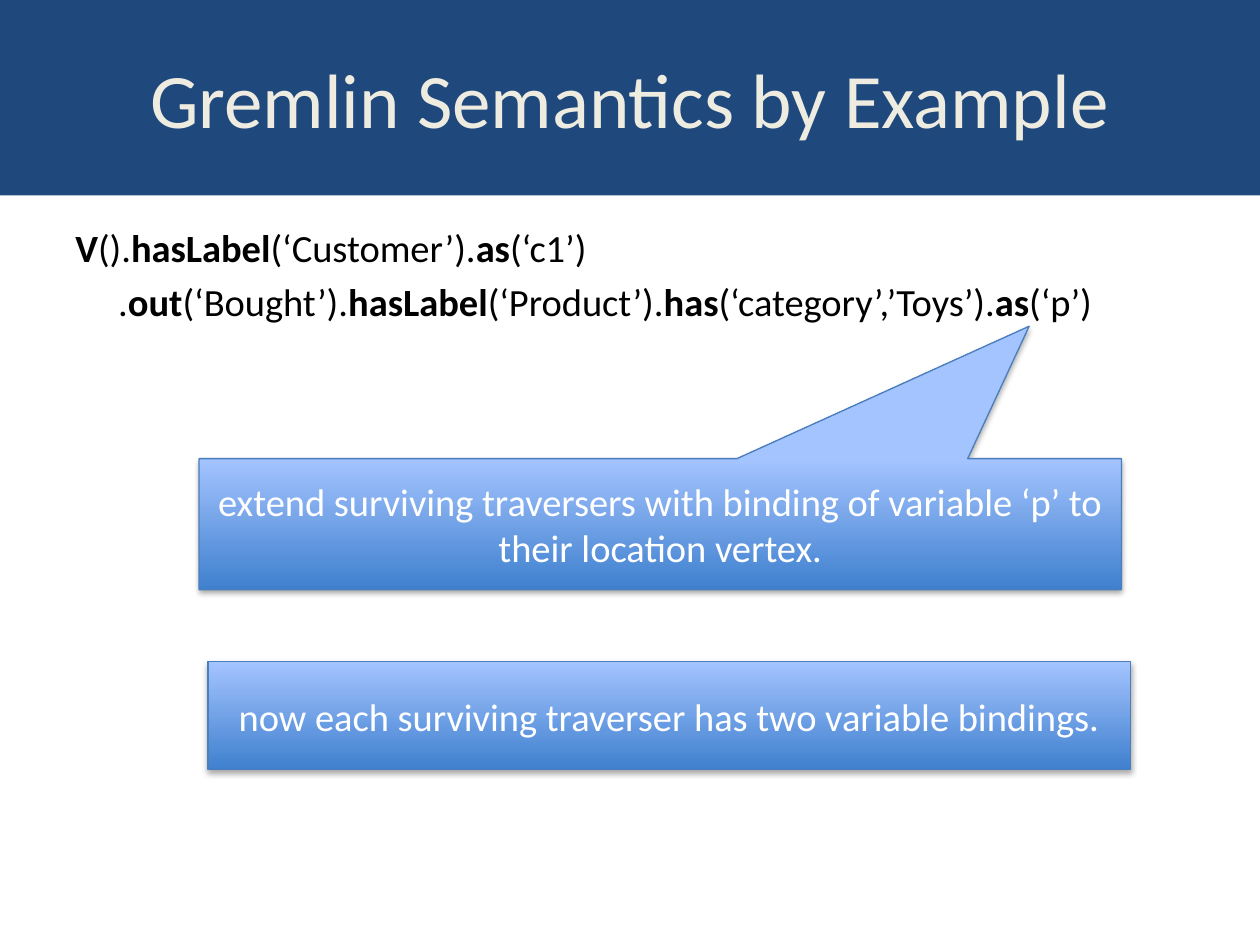
from lxml import etree
from pptx import Presentation
from pptx.dml.color import RGBColor
from pptx.enum import shapes, text
from pptx.oxml import ns
from pptx.util import Inches, Pt

COLORS = {
    "banner": "1F497D", "title": "EEECE1", "code": "000000",
    "callout_low": "3F80CE", "callout_high": "A4C4FF",
    "callout_edge": "4B7EBC", "callout_text": "FFFFFF", "shadow": "000000",
}
FONT = "Calibri"
TRAVERSAL = [
    (0, [("V", True), ("().", False), ("hasLabel", True),
         ("(‘Customer’).", False), ("as", True), ("(‘c1’)", False)]),
    (0.34, [(".", False), ("out", True), ("(‘Bought’).", False),
            ("hasLabel", True), ("(‘Product’).", False), ("has", True),
            ("(‘category’,’Toys’).", False), ("as", True), ("(‘p’)", False)]),
]
CALLOUTS = [
    ((1.58, 3.64, 7.32, 1.04), (0.4, -1.51),
     "extend surviving traversers with binding of variable ‘p’ to their location vertex."),
    ((1.65, 5.25, 7.32, 0.86), (0.31, -0.5),
     "now each surviving traverser has two variable bindings."),
]


def rgb(name):
    """Return the named palette colour."""
    return RGBColor.from_string(COLORS[name])


def set_font(paragraph, size, color):
    """Give a paragraph its typeface, size and colour."""
    paragraph.font.name = FONT
    paragraph.font.size = Pt(size)
    paragraph.font.color.rgb = rgb(color)


def write_centred(shape, wording, size, color):
    """Write one paragraph in the middle of a shape."""
    frame = shape.text_frame
    frame.word_wrap = True
    frame.vertical_anchor = text.MSO_ANCHOR.MIDDLE
    paragraph = frame.paragraphs[0]
    paragraph.text = wording
    paragraph.alignment = text.PP_ALIGN.CENTER
    set_font(paragraph, size, color)


def add_banner(slide, box, wording):
    """Draw the title banner."""
    banner = slide.shapes.add_shape(shapes.MSO_SHAPE.RECTANGLE, *map(Inches, box))
    banner.shadow.inherit = False
    banner.fill.solid()
    banner.fill.fore_color.rgb = rgb("banner")
    banner.line.fill.background()
    write_centred(banner, wording, 44, "title")


def add_traversal(slide, box, lines):
    """Write the query, one paragraph per line, with step names in bold."""
    frame = slide.shapes.add_textbox(*map(Inches, box)).text_frame
    frame.word_wrap = True
    for number, (indent, pieces) in enumerate(lines):
        line = frame.add_paragraph() if number else frame.paragraphs[0]
        line.space_before = Pt(4.4)
        line._p.get_or_add_pPr().set("marL", str(Inches(indent)))
        set_font(line, 22, "code")
        for wording, bold in pieces:
            step = line.add_run()
            step.text = wording
            step.font.bold = bold


def add_soft_shadow(shape):
    """Add a soft shadow below a shape."""
    shape.shadow.inherit = False
    effects = shape._element.spPr.find(ns.qn("a:effectLst"))
    shadow = etree.SubElement(
        effects, ns.qn("a:outerShdw"), blurRad=str(Pt(3.1)), dist=str(Pt(1.8)),
        dir="5400000", rotWithShape="0")
    color = etree.SubElement(shadow, ns.qn("a:srgbClr"), val=COLORS["shadow"])
    etree.SubElement(color, ns.qn("a:alpha"), val="35000")


def add_callout(slide, box, tip, wording):
    """Draw a gradient callout whose tip is an offset from its centre."""
    callout = slide.shapes.add_shape(
        shapes.MSO_SHAPE.RECTANGULAR_CALLOUT, *map(Inches, box))
    for index, offset in enumerate(tip):
        callout.adjustments[index] = offset
    callout.fill.gradient()
    callout.fill.gradient_angle = 90
    for stop, name in zip(callout.fill.gradient_stops, ("callout_low", "callout_high")):
        stop.color.rgb = rgb(name)
    callout.line.color.rgb = rgb("callout_edge")
    callout.line.width = Pt(0.75)
    add_soft_shadow(callout)
    write_centred(callout, wording, 22, "callout_text")


def main():
    """Build and save the slide."""
    deck = Presentation()
    deck.slide_width, deck.slide_height = Inches(10), Inches(7.5)
    slide = deck.slides.add_slide(deck.slide_layouts[6])
    add_banner(slide, (0, 0, 10, 1.55), "Gremlin Semantics by Example")
    add_traversal(slide, (0.5, 1.73, 9, 4.95), TRAVERSAL)
    for box, tip, wording in CALLOUTS:
        add_callout(slide, box, tip, wording)
    deck.save("out.pptx")


if __name__ == "__main__":
    main()
